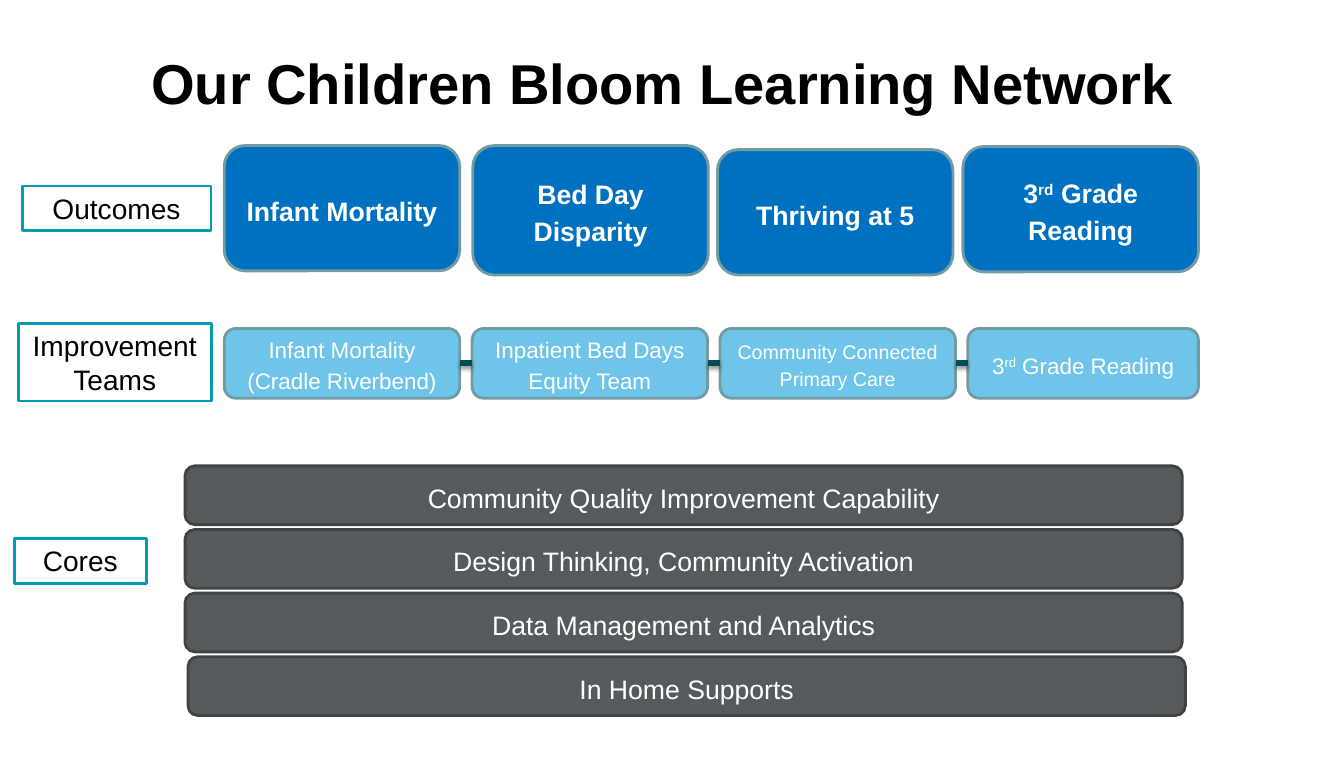
from itertools import pairwise

from lxml.etree import SubElement
from pptx import Presentation
from pptx.dml.color import RGBColor
from pptx.enum.shapes import MSO_CONNECTOR as Connector, MSO_SHAPE as Shape
from pptx.enum.text import MSO_ANCHOR as Anchor, MSO_AUTO_SIZE as AutoSize, PP_ALIGN as Align
from pptx.oxml.ns import qn
from pptx.util import Pt

WHITE = RGBColor(0xFF, 0xFF, 0xFF)
BLACK = RGBColor(0x00, 0x00, 0x00)
OUTCOME_BLUE = RGBColor(0x00, 0x70, 0xC0)
TEAM_BLUE = RGBColor(0x6E, 0xC4, 0xE9)
BLUE_EDGE = RGBColor(0x72, 0x9B, 0xA3)
LABEL_EDGE = RGBColor(0x00, 0x9C, 0xB1)
CORE_GREY = RGBColor(0x56, 0x5A, 0x5C)
CORE_EDGE = RGBColor(0x40, 0x43, 0x44)
LINK_TEAL = RGBColor(0x00, 0x4E, 0x58)

LABEL_FORMAT = {"size": Pt(20), "color": BLACK}
OUTCOME_FORMAT = {"size": Pt(19), "color": WHITE, "bold": True}
CORE_FORMAT = {"size": Pt(19), "color": WHITE}
CARD_SPACING = {"line_spacing": 1.15, "space_after": Pt(10)}
THIRD_GRADE = ("3", "^rd", " Grade Reading")


def add_runs(paragraph, parts, text_format):
    for part in parts:
        run = paragraph.add_run()
        run.text = part.removeprefix("^")
        run.font.name = "Arial"
        for name, value in text_format.items():
            if name == "color":
                run.font.color.rgb = value
            else:
                setattr(run.font, name, value)
        if part.startswith("^"):
            run.font._element.set("baseline", "30000")


def add_box(slide, kind, box, fill, edge, parts, text_format, spacing):
    shape = slide.shapes.add_shape(kind, *map(Pt, box))
    shape.shadow.inherit = False
    shape.fill.solid()
    shape.fill.fore_color.rgb = fill
    if edge is None:
        shape.line.fill.background()
    else:
        shape.line.color.rgb = edge
        shape.line.width = Pt(2)
    frame = shape.text_frame
    frame.word_wrap = True
    frame.vertical_anchor = Anchor.MIDDLE
    paragraph = frame.paragraphs[0]
    paragraph.alignment = Align.CENTER
    for name, value in spacing.items():
        setattr(paragraph, name, value)
    add_runs(paragraph, parts, text_format)
    return shape


def add_title(slide, box):
    title_format = {"size": Pt(40), "color": BLACK, "bold": True}
    add_box(slide, Shape.ROUNDED_RECTANGLE, box, WHITE, None,
            ["Our Children Bloom Learning Network"], title_format, {})


def add_label(slide, box, text):
    label = add_box(slide, Shape.RECTANGLE, box, WHITE, LABEL_EDGE, [text], LABEL_FORMAT, {})
    label.text_frame.vertical_anchor = Anchor.TOP
    label.text_frame.auto_size = AutoSize.SHAPE_TO_FIT_TEXT


def add_outcomes(slide, box):
    left, top, width, height = box
    card_width = 167.8
    cards = [
        (0, 0, 0, ["Infant Mortality"]),
        (177.1, 0, 2.9, ["Bed Day Disparity"]),
        (351.4, 2.9, 0, ["Thriving at 5"]),
        (width - card_width, 0.7, 0, THIRD_GRADE),
    ]
    for across, down, extra, parts in cards:
        add_box(slide, Shape.ROUNDED_RECTANGLE,
                (left + across, top + down, card_width, height + extra),
                OUTCOME_BLUE, BLUE_EDGE, parts, OUTCOME_FORMAT, CARD_SPACING)


def add_link(slide, start, end):
    link = slide.shapes.add_connector(Connector.STRAIGHT, 0, 0, 0, 0)
    link.begin_connect(start, 3)
    link.end_connect(end, 1)
    link.line.color.rgb = LINK_TEAL
    link.line.width = Pt(4.5)
    effects = SubElement(link._element.spPr, qn("a:effectLst"))
    shadow = SubElement(effects, qn("a:outerShdw"), blurRad=str(Pt(3.1)), dist=str(Pt(1.6)),
                        dir="5400000", rotWithShape="0")
    color = SubElement(shadow, qn("a:srgbClr"), val="000000")
    SubElement(color, qn("a:alpha"), val="38000")


def add_teams(slide, box):
    left, top, width, height = box
    pitch, card_width = 176.6, 167.8
    teams = [
        (["Infant Mortality (Cradle Riverbend)"], 16),
        (["Inpatient Bed Days Equity Team"], 16),
        (["Community Connected Primary Care"], 14),
        (THIRD_GRADE, 16),
    ]
    cards = []
    for index, (parts, size) in enumerate(teams):
        across = index * pitch
        card_box = (left + across, top, min(card_width, width - across), height)
        cards.append(add_box(slide, Shape.ROUNDED_RECTANGLE, card_box, TEAM_BLUE, BLUE_EDGE,
                             parts, {"size": Pt(size), "color": WHITE}, CARD_SPACING))
    for start, end in pairwise(cards):
        add_link(slide, start, end)


def add_cores(slide, box):
    left, top, width, height = box
    bar_height = 41.8
    cores = [
        (0, "Community Quality Improvement Capability"),
        (0, "Design Thinking, Community Activation"),
        (0, "Data Management and Analytics"),
        (2.2, "In Home Supports"),
    ]
    pitch = (height - bar_height) / (len(cores) - 1)
    for index, (shift, text) in enumerate(cores):
        add_box(slide, Shape.ROUNDED_RECTANGLE,
                (left + shift, top + index * pitch, width, bar_height),
                CORE_GREY, CORE_EDGE, [text], CORE_FORMAT, CARD_SPACING)


def main():
    presentation = Presentation()
    presentation.slide_width = Pt(957.6)
    presentation.slide_height = Pt(540)
    slide = presentation.slides.add_slide(presentation.slide_layouts[6])
    add_title(slide, (1, 13.5, 941.8, 90))
    add_label(slide, (15.8, 132.5, 134.6, 31.7), "Outcomes")
    add_outcomes(slide, (159.8, 103.7, 694.1, 89.3))
    add_label(slide, (13, 230.4, 137.5, 55.4), "Improvement Teams")
    add_teams(slide, (159.8, 234, 694.1, 49.7))
    add_label(slide, (10.1, 383.8, 94.3, 31.7), "Cores")
    add_cores(slide, (131.8, 331.9, 710.6, 177.8))
    presentation.save("out.pptx")


if __name__ == "__main__":
    main()
